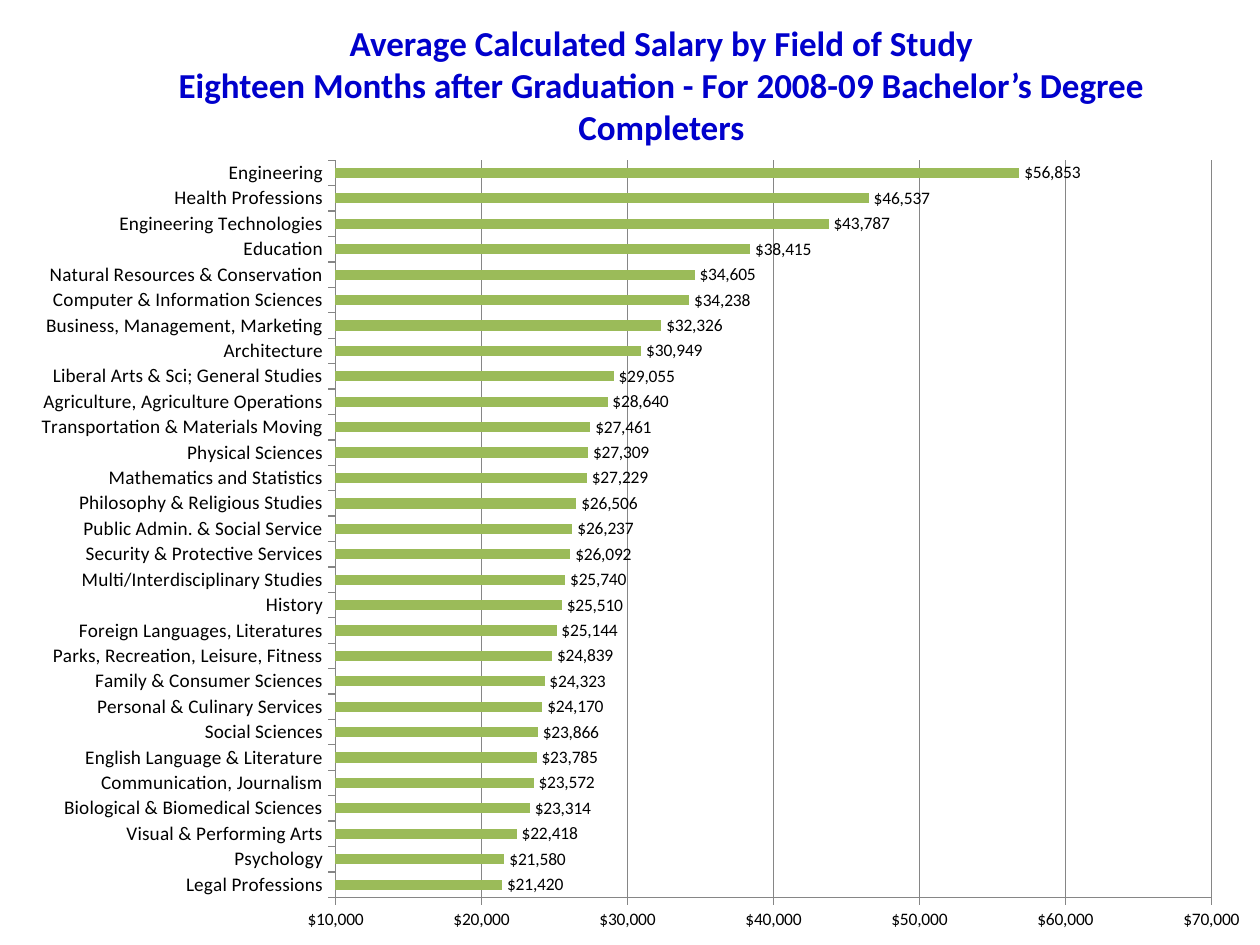
"""Build a slide charting average salary by field of study."""
from lxml import etree
from pptx import Presentation
from pptx.chart import data as chart_data
from pptx.dml import color
from pptx.enum import chart as ch, text
from pptx.oxml import ns
from pptx.util import Pt

HEADING = ("Average Calculated Salary by Field of Study\v"
           "Eighteen Months after Graduation - For 2008-09 Bachelor’s Degree Completers")
SALARIES = [
    ("Engineering", 56853),
    ("Health Professions", 46537),
    ("Engineering Technologies", 43787),
    ("Education", 38415),
    ("Natural Resources & Conservation", 34605),
    ("Computer & Information Sciences", 34238),
    ("Business, Management, Marketing", 32326),
    ("Architecture", 30949),
    ("Liberal Arts & Sci; General Studies", 29055),
    ("Agriculture, Agriculture Operations", 28640),
    ("Transportation & Materials Moving", 27461),
    ("Physical Sciences", 27309),
    ("Mathematics and Statistics", 27229),
    ("Philosophy & Religious Studies", 26506),
    ("Public Admin. & Social Service", 26237),
    ("Security & Protective Services", 26092),
    ("Multi/Interdisciplinary Studies", 25740),
    ("History", 25510),
    ("Foreign Languages, Literatures", 25144),
    ("Parks, Recreation, Leisure, Fitness", 24839),
    ("Family & Consumer Sciences", 24323),
    ("Personal & Culinary Services", 24170),
    ("Social Sciences", 23866),
    ("English Language & Literature", 23785),
    ("Communication, Journalism", 23572),
    ("Biological & Biomedical Sciences", 23314),
    ("Visual & Performing Arts", 22418),
    ("Psychology", 21580),
    ("Legal Professions", 21420),
]
HEADING_BOX = (72, 12.24, 612, 72)
CHART_BOX = (23.76, 87.12, 696.24, 452.88)
PLOT = {"x": 0.24, "y": 0.01, "w": 0.72, "h": 0.93}
DOLLARS = '"$"#,##0'
FONT = "Calibri"


def rgb(hex_color):
    return color.RGBColor.from_string(hex_color)


def set_font(font, size, hex_color="000000", bold=False):
    font.name, font.size, font.bold = FONT, Pt(size), bold
    font.color.rgb = rgb(hex_color)


def add_heading(slide):
    frame = slide.shapes.add_textbox(*map(Pt, HEADING_BOX)).text_frame
    frame.word_wrap = True
    frame.vertical_anchor = text.MSO_ANCHOR.MIDDLE
    frame.text = HEADING
    paragraph = frame.paragraphs[0]
    paragraph.alignment = text.PP_ALIGN.CENTER
    for run in paragraph.runs:
        set_font(run.font, 20, "0000CC", True)


def place_plot(chart):
    area = chart.element.find(".//" + ns.qn("c:plotArea"))
    for old in area.findall(ns.qn("c:layout")):
        area.remove(old)
    layout = etree.Element(ns.qn("c:layout"))
    manual = etree.SubElement(layout, ns.qn("c:manualLayout"))
    settings = {"layoutTarget": "inner", "xMode": "edge", "yMode": "edge", **PLOT}
    for tag, value in settings.items():
        etree.SubElement(manual, ns.qn("c:" + tag), val=str(value))
    area.insert(0, layout)


def add_salary_chart(slide):
    fields, salaries = zip(*reversed(SALARIES))
    data = chart_data.CategoryChartData(number_format=DOLLARS)
    data.categories = fields
    data.add_series("Series 1", salaries)
    chart = slide.shapes.add_chart(
        ch.XL_CHART_TYPE.BAR_CLUSTERED, *map(Pt, CHART_BOX), data).chart
    chart.has_legend = chart.has_title = False
    set_font(chart.font, 10)
    place_plot(chart)

    field_axis, salary_axis = chart.category_axis, chart.value_axis
    set_font(field_axis.tick_labels.font, 11)
    set_font(salary_axis.tick_labels.font, 10)
    salary_axis.minimum_scale, salary_axis.maximum_scale = 10000, 70000
    salary_axis.major_unit = 10000
    salary_axis.has_major_gridlines = True
    salary_axis.tick_labels.number_format = DOLLARS
    salary_axis.tick_labels.number_format_is_linked = False
    for axis in (field_axis, salary_axis):
        axis.major_tick_mark = ch.XL_TICK_MARK.OUTSIDE
    for line in (field_axis.format.line, salary_axis.format.line,
                 salary_axis.major_gridlines.format.line):
        line.color.rgb, line.width = rgb("868686"), Pt(0.75)

    bars = chart.plots[0]
    bars.vary_by_categories = False
    bars.gap_width = 150
    fill = bars.series[0].format.fill
    fill.solid()
    fill.fore_color.rgb = rgb("9BBB59")
    labels = bars.series[0].data_labels
    labels.show_value = True
    labels.number_format, labels.number_format_is_linked = DOLLARS, False
    labels.position = ch.XL_LABEL_POSITION.OUTSIDE_END
    set_font(labels.font, 10)


def main():
    deck = Presentation()
    deck.slide_width, deck.slide_height = Pt(720), Pt(540)
    slide = deck.slides.add_slide(deck.slide_layouts[6])
    add_heading(slide)
    add_salary_chart(slide)
    deck.save("out.pptx")


if __name__ == "__main__":
    main()
